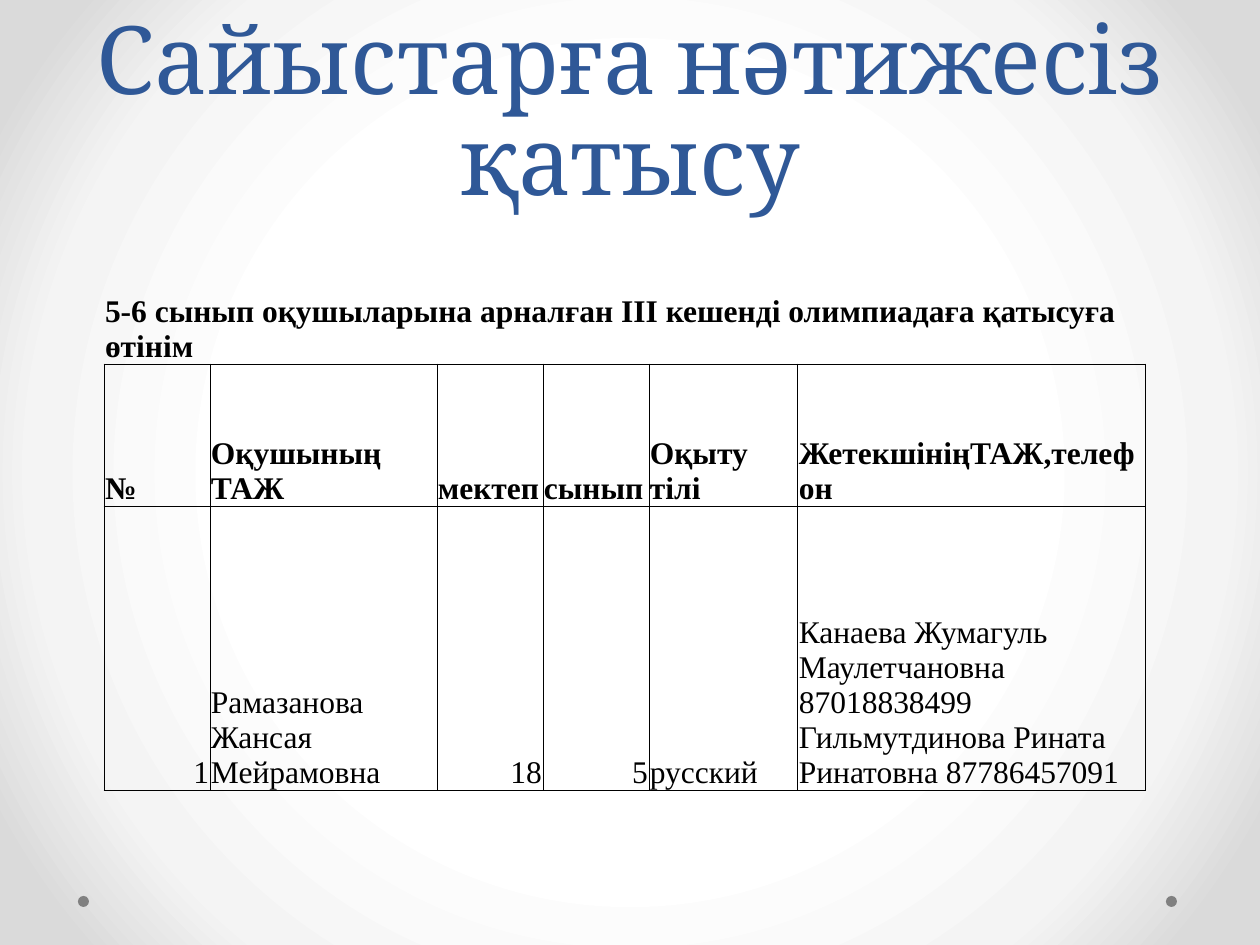
from lxml import etree
from pptx import Presentation
from pptx.dml.color import RGBColor
from pptx.enum.shapes import MSO_SHAPE
from pptx.enum.text import MSO_ANCHOR, PP_ALIGN
from pptx.oxml import parse_xml
from pptx.oxml.ns import nsdecls, qn
from pptx.util import Emu, Pt

PX_PER_INCH = 126
BLACK, BLUE, GRAY = "000000", "2F5897", "808080"


def px(n):
    return Emu(round(n * 914400 / PX_PER_INCH))


def rgb(color):
    return RGBColor.from_string(color)


class Deck:
    title_font, table_font = "Cambria", "Times New Roman"

    def __init__(self, prs):
        self.s = prs.slides.add_slide(prs.slide_layouts[6])

    def radial_background(self, stops):
        gs = "".join(f'<a:gs pos="{pos * 1000}"><a:srgbClr val="{color}"/></a:gs>'
                     for pos, color in stops)
        bg = parse_xml(
            f'<p:bg {nsdecls("p", "a")}><p:bgPr><a:gradFill rotWithShape="1">'
            f'<a:gsLst>{gs}</a:gsLst><a:path path="circle">'
            '<a:fillToRect l="50000" t="50000" r="50000" b="50000"/></a:path>'
            '</a:gradFill><a:effectLst/></p:bgPr></p:bg>')
        self.s.element.cSld.insert(0, bg)

    def dot(self, x, y, size):
        sp = self.s.shapes.add_shape(MSO_SHAPE.OVAL, px(x), px(y), px(size), px(size))
        sp.shadow.inherit = False
        sp.fill.solid()
        sp.fill.fore_color.rgb = rgb(GRAY)
        sp.line.fill.background()

    def style(self, p, font, size, color, bold=False):
        for r in p.runs:
            r.font.name, r.font.size, r.font.bold = font, Pt(size), bold
            r.font.color.rgb = rgb(color)

    def title(self, text, x, y, w, h):
        tf = self.s.shapes.add_textbox(px(x), px(y), px(w), px(h)).text_frame
        tf.word_wrap = True
        tf.vertical_anchor = MSO_ANCHOR.BOTTOM
        tf.text = text
        p = tf.paragraphs[0]
        p.alignment, p.line_spacing = PP_ALIGN.CENTER, Pt(58)
        self.style(p, self.title_font, 54, BLUE)

    def borders(self, cell, sides):
        tcPr = cell._tc.get_or_add_tcPr()
        for side in "LRTB":
            ln = etree.SubElement(tcPr, qn(f"a:ln{side}"), w=str(Pt(0.5)))
            if side in sides:
                fill = etree.SubElement(ln, qn("a:solidFill"))
                etree.SubElement(fill, qn("a:srgbClr"), val=BLACK)
            else:
                etree.SubElement(ln, qn("a:noFill"))

    def table(self, rows, x, y, widths, heights):
        tbl = self.s.shapes.add_table(len(rows), len(widths), px(x), px(y),
                                      px(sum(widths)), px(sum(heights))).table
        tbl.first_row = tbl.horz_banding = False
        for col, w in zip(tbl.columns, widths):
            col.width = px(w)
        for row, h in zip(tbl.rows, heights):
            row.height = px(h)
        # The caption spans the whole first row
        tbl.cell(0, 0).merge(tbl.cell(0, len(widths) - 1))
        for i, texts in enumerate(rows):
            for j in range(len(widths)):
                cell = tbl.cell(i, j)
                self.borders(cell, "LRTB" if i else "B")
                cell.fill.background()
                cell.vertical_anchor = MSO_ANCHOR.BOTTOM
                cell.margin_left = cell.margin_right = cell.margin_top = px(1)
                cell.margin_bottom = 0
                if j < len(texts):
                    cell.text_frame.text = texts[j]
                    p = cell.text_frame.paragraphs[0]
                    p.alignment = PP_ALIGN.RIGHT if texts[j].isdigit() else PP_ALIGN.LEFT
                    self.style(p, self.table_font, 18, BLACK, bold=i < 2)


def main():
    prs = Presentation()
    prs.slide_width, prs.slide_height = px(1260), px(945)
    deck = Deck(prs)

    # Background and corner dots
    deck.radial_background([(50, "FFFFFF"), (76, "F4F4F4"), (92, "DADADA")])
    for x in (1166, 78):
        deck.dot(x, 896, 11)

    # Title
    deck.title("Сайыстарға нәтижесіз қатысу", 63, 0, 1134, 221)

    # Application table
    rows = [
        ["5-6 сынып оқушыларына арналған ІІІ кешенді олимпиадаға қатысуға өтінім"],
        ["№", "Оқушының ТАЖ", "мектеп", "сынып", "Оқыту тілі",
         "ЖетекшініңТАЖ,телефон"],
        ["1", "Рамазанова Жансая Мейрамовна", "18", "5", "русский",
         "Канаева Жумагуль Маулетчановна 87018838499 "
         "Гильмутдинова Рината Ринатовна 87786457091"],
    ]
    deck.table(rows, 104, 254, [106, 227, 106, 106, 149, 348], [110, 142, 284])
    prs.save("out.pptx")


if __name__ == "__main__":
    main()
